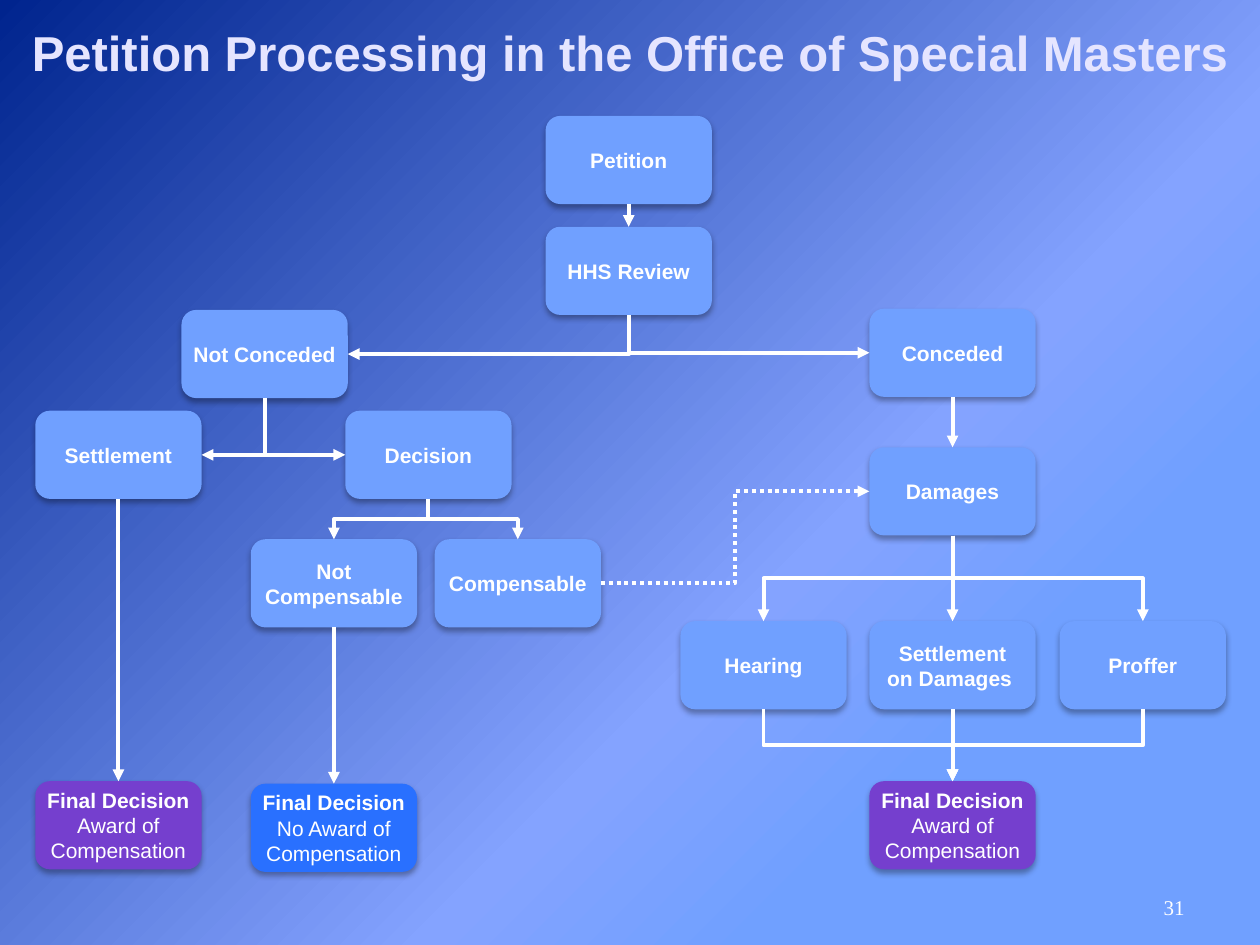
from lxml.etree import SubElement
from pptx import Presentation
from pptx.dml.color import RGBColor
from pptx.enum.dml import MSO_LINE
from pptx.enum.shapes import MSO_CONNECTOR as CONN, MSO_SHAPE as SHAPE
from pptx.enum.text import MSO_ANCHOR as ANCHOR, PP_ALIGN as ALIGN
from pptx.oxml.ns import qn
from pptx.util import Inches, Pt

WHITE = RGBColor(0xFF, 0xFF, 0xFF)
LAVENDER = RGBColor(0xE5, 0xE5, 0xFF)
SKY = RGBColor(0x70, 0xA0, 0xFF)
BLUE = RGBColor(0x29, 0x70, 0xFF)
PURPLE = RGBColor(0x75, 0x3F, 0xCE)
NAVY = RGBColor(0x00, 0x24, 0x8E)
PERIWINKLE = RGBColor(0x84, 0xA3, 0xFF)
BLACK = RGBColor(0, 0, 0)

BOX_W, BOX_H = 1.32, 0.7
TOP, BOTTOM = 0, 2
AWARD = ["Final Decision", "Award of", "Compensation"]
NO_AWARD = ["Final Decision", "No Award of", "Compensation"]

BOXES = {
    "petition": (4.33, 0.92, ["Petition"], SKY),
    "review": (4.33, 1.8, ["HHS Review"], SKY),
    "not conceded": (1.44, 2.46, ["Not Conceded"], SKY),
    "conceded": (6.9, 2.45, ["Conceded"], SKY),
    "settlement": (0.28, 3.26, ["Settlement"], SKY),
    "decision": (2.74, 3.26, ["Decision"], SKY),
    "not compensable": (1.99, 4.28, ["Not", "Compensable"], SKY),
    "compensable": (3.45, 4.28, ["Compensable"], SKY),
    "damages": (6.9, 3.55, ["Damages"], SKY),
    "hearing": (5.4, 4.93, ["Hearing"], SKY),
    "damages settlement": (6.9, 4.93, ["Settlement", "on Damages "], SKY),
    "proffer": (8.41, 4.93, ["Proffer"], SKY),
    "settlement award": (0.28, 6.2, AWARD, PURPLE),
    "no award": (1.99, 6.22, NO_AWARD, BLUE),
    "damages award": (6.9, 6.2, AWARD, PURPLE),
}
STRAIGHT = [
    ("petition", "review"),
    ("conceded", "damages"),
    ("damages", "damages settlement"),
    ("damages settlement", "damages award"),
    ("settlement", "settlement award"),
    ("not compensable", "no award"),
]
TO_SIDE = [
    ("review", "not conceded"),
    ("review", "conceded"),
    ("not conceded", "settlement"),
    ("not conceded", "decision"),
]
TO_TOP = [
    ("decision", "not compensable"),
    ("decision", "compensable"),
    ("damages", "hearing"),
    ("damages", "proffer"),
    ("hearing", "damages award"),
    ("proffer", "damages award"),
]


class FlowSlide:
    font = {"name": "Arial", "size": Pt(12), "bold": True}
    line_width = Pt(2.25)

    def __init__(self, s):
        self.s = s

    def background(self, stops):
        fill = self.s.background.fill
        fill.gradient()
        fill.gradient_angle = 315
        gs_list = self.s._element.find(".//" + qn("a:gsLst"))
        for gs in list(gs_list):
            gs_list.remove(gs)
        for pos, color in stops:
            gs = SubElement(gs_list, qn("a:gs"), pos=str(pos * 1000))
            SubElement(gs, qn("a:srgbClr"), val=str(color))

    def text(self, tf, lines, color=WHITE, align=ALIGN.CENTER, anchor=ANCHOR.MIDDLE, **style):
        tf.vertical_anchor = anchor
        for i, line in enumerate(lines):
            p = tf.add_paragraph() if i else tf.paragraphs[0]
            p.alignment = align
            r = p.add_run()
            r.text = line
            for key, value in {**self.font, **style}.items():
                setattr(r.font, key, value)
            r.font.color.rgb = color

    def title(self, text):
        sp = self.s.shapes.title
        sp.left, sp.top, sp.width, sp.height = map(Inches, (0, 0, 10, 0.83))
        self.text(sp.text_frame, [text], LAVENDER, size=Pt(28))

    def page_number(self, text):
        sp = self.s.shapes.add_textbox(*map(Inches, (7.17, 6.83, 2.33, 0.52)))
        sp.text_frame.word_wrap = True
        self.text(sp.text_frame, [text], align=ALIGN.RIGHT, anchor=ANCHOR.BOTTOM,
                  name="Times New Roman", bold=False)

    def box(self, left, top, lines, color):
        sp = self.s.shapes.add_shape(SHAPE.ROUNDED_RECTANGLE,
                                     *map(Inches, (left, top, BOX_W, BOX_H)))
        sp.fill.solid()
        sp.fill.fore_color.rgb = color
        sp.line.fill.background()
        sp.shadow.inherit = False
        effects = sp._element.spPr.find(qn("a:effectLst"))
        shadow = SubElement(effects, qn("a:outerShdw"), blurRad=str(Pt(3.5)),
                            dist=str(Pt(2.2)), dir="5400000", rotWithShape="0")
        shade = SubElement(shadow, qn("a:srgbClr"), val=str(BLACK))
        SubElement(shade, qn("a:alpha"), val="32000")
        tf = sp.text_frame
        for side in ("left", "top", "right", "bottom"):
            setattr(tf, "margin_" + side, 0)
        tf.word_wrap = False
        self.text(tf, lines)
        if len(lines) > 2:
            for p in tf.paragraphs[1:]:
                p.runs[0].font.bold = False
        return sp

    def arrow(self, kind, x1, y1, x2, y2):
        con = self.s.shapes.add_connector(kind, x1, y1, x2, y2)
        con.line.color.rgb = WHITE
        con.line.width = self.line_width
        SubElement(con._element.spPr.find(qn("a:ln")), qn("a:tailEnd"), type="triangle")
        SubElement(con._element.spPr, qn("a:effectLst"))
        return con

    def straight(self, start, end):
        con = self.arrow(CONN.STRAIGHT, 0, 0, 0, 0)
        con.begin_connect(start, BOTTOM)
        con.end_connect(end, TOP)

    def bent(self, start, end, to_side=False):
        x1, y1 = start.left + start.width // 2, start.top + start.height
        x2, y2 = end.left + end.width // 2, end.top
        leftward = x2 < x1
        if to_side:
            x2 = end.left + (end.width if leftward else 0)
            y2 += end.height // 2
        run, drop = abs(x2 - x1), y2 - y1
        con = self.arrow(CONN.ELBOW, 0, 0, 0, 0)
        con.left, con.top = (x1 + x2 - drop) // 2, (y1 + y2 - run) // 2
        con.width, con.height = drop, run
        xfrm = con._element.spPr.find(qn("a:xfrm"))
        xfrm.set("rot", "5400000" if leftward else "16200000")
        if not leftward:
            xfrm.set("flipH", "1")
        if to_side:
            con._element.spPr.find(qn("a:prstGeom")).set("prst", "bentConnector2")

    def dotted(self, start, end):
        con = self.arrow(CONN.ELBOW, start.left + start.width, start.top + start.height // 2,
                         end.left, end.top + end.height // 2)
        con.line.dash_style = MSO_LINE.ROUND_DOT


def main():
    prs = Presentation()
    prs.slide_width, prs.slide_height = Inches(10), Inches(7.5)
    flow = FlowSlide(prs.slides.add_slide(prs.slide_layouts[5]))
    flow.background([(0, NAVY), (62, PERIWINKLE), (77, SKY), (100, SKY)])
    flow.title("Petition Processing in the Office of Special Masters")
    flow.page_number("31")
    boxes = {name: flow.box(*row) for name, row in BOXES.items()}
    for start, end in STRAIGHT:
        flow.straight(boxes[start], boxes[end])
    for start, end in TO_SIDE:
        flow.bent(boxes[start], boxes[end], to_side=True)
    for start, end in TO_TOP:
        flow.bent(boxes[start], boxes[end])
    flow.dotted(boxes["compensable"], boxes["damages"])
    prs.save("out.pptx")


if __name__ == "__main__":
    main()
